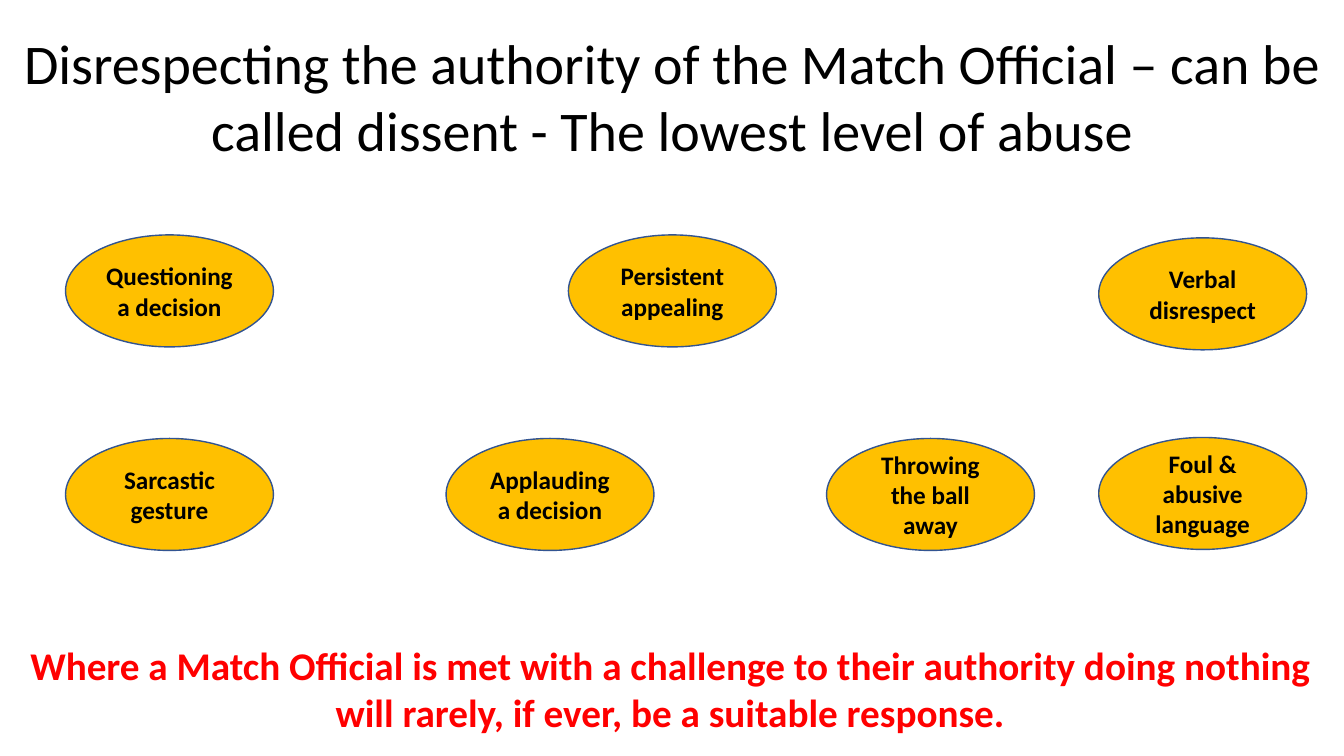
"""Build a slide on disrespecting the authority of the match official."""
import pptx
import pptx.dml.color
import pptx.enum.shapes
import pptx.enum.text
import pptx.util

Pt = pptx.util.Pt
BLACK = pptx.dml.color.RGBColor(0x00, 0x00, 0x00)
RED = pptx.dml.color.RGBColor(0xFF, 0x00, 0x00)
AMBER = pptx.dml.color.RGBColor(0xFF, 0xC0, 0x00)
BLUE = pptx.dml.color.RGBColor(0x32, 0x54, 0x91)

SLIDE_WIDTH, SLIDE_HEIGHT = 960, 540
OVAL_WIDTH, OVAL_HEIGHT = 148.5, 80
LEFT, RIGHT = 46.8, 784.8
LOWER_STEP = 271.8


def write_centred(shape, text, size, color, bold):
    frame = shape.text_frame
    frame.word_wrap = True
    para = frame.paragraphs[0]
    para.alignment = pptx.enum.text.PP_ALIGN.CENTER
    span = para.add_run()
    span.text = text
    span.font.name = "Calibri"
    span.font.size = Pt(size)
    span.font.bold = bold
    span.font.color.rgb = color


deck = pptx.Presentation()
deck.slide_width = Pt(SLIDE_WIDTH)
deck.slide_height = Pt(SLIDE_HEIGHT)
page = deck.slides.add_slide(deck.slide_layouts[6])

statements = [
    (0, 16.5, 143.3, 40, BLACK, False,
     "Disrespecting the authority of the Match Official – can be called dissent"
     " - The lowest level of abuse"),
    (-1.4, 454.3, 75, 28, RED, True,
     "Where a Match Official is met with a challenge to their authority doing nothing"
     " will rarely, if ever, be a suitable response."),
]
for left, top, height, size, color, bold, text in statements:
    box = page.shapes.add_textbox(Pt(left), Pt(top), Pt(SLIDE_WIDTH), Pt(height))
    write_centred(box, text, size, color, bold)

behaviours = [
    (LEFT, 167.8, "Questioning a decision"),
    (406, 167.8, "Persistent appealing"),
    (RIGHT, 169.9, "Verbal disrespect"),
    (LEFT, 313.2, "Sarcastic gesture"),
    (LEFT + LOWER_STEP, 313.2, "Applauding a decision"),
    (LEFT + 2 * LOWER_STEP, 313.2, "Throwing the ball away"),
    (RIGHT, 312.5, "Foul & abusive language"),
]
for left, top, text in behaviours:
    oval = page.shapes.add_shape(
        pptx.enum.shapes.MSO_SHAPE.OVAL,
        Pt(left), Pt(top), Pt(OVAL_WIDTH), Pt(OVAL_HEIGHT))
    oval.shadow.inherit = False
    oval.fill.solid()
    oval.fill.fore_color.rgb = AMBER
    oval.line.color.rgb = BLUE
    oval.line.width = Pt(1)
    oval.text_frame.vertical_anchor = pptx.enum.text.MSO_ANCHOR.MIDDLE
    write_centred(oval, text, 18, BLACK, True)

deck.save("out.pptx")
